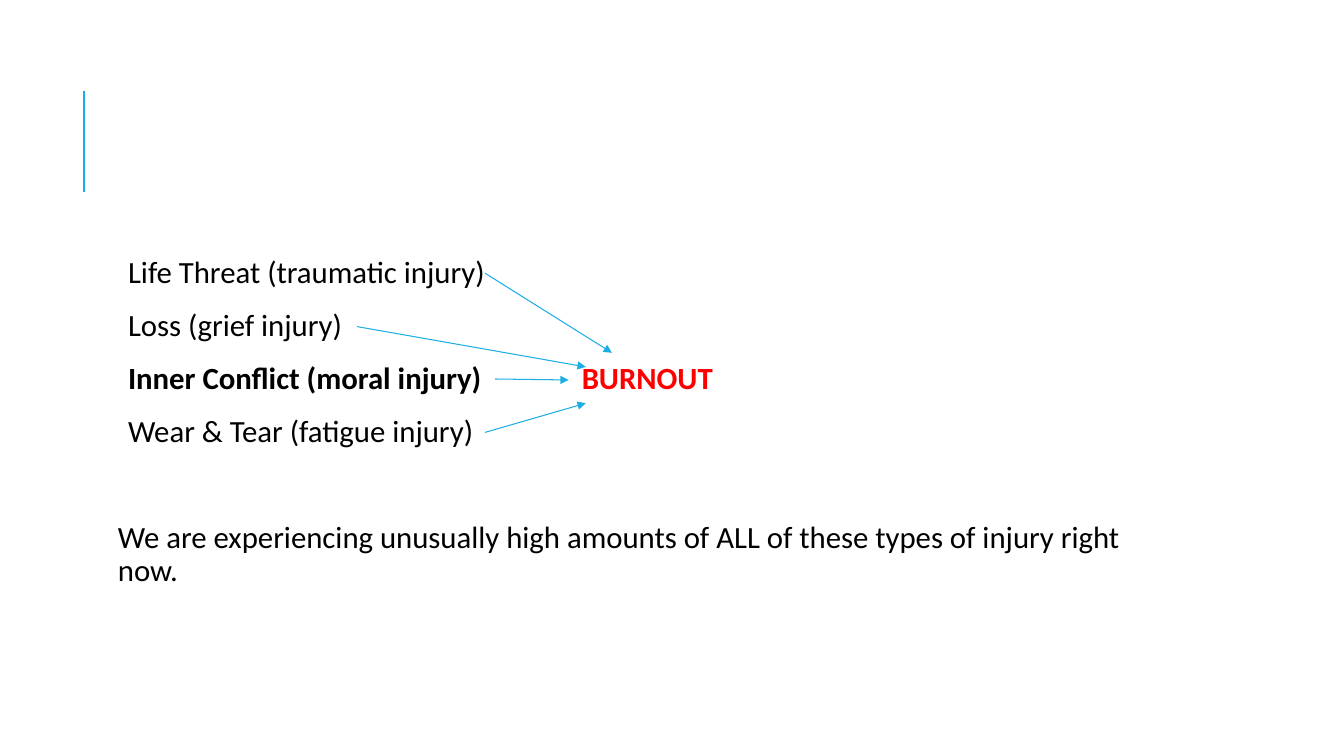
from lxml import etree
from pptx import Presentation
from pptx.dml.color import RGBColor
from pptx.enum.shapes import MSO_CONNECTOR
from pptx.enum.text import MSO_ANCHOR, MSO_AUTO_SIZE
from pptx.oxml.ns import qn
from pptx.util import Inches, Pt

STRAIGHT = MSO_CONNECTOR.STRAIGHT
TOP = MSO_ANCHOR.TOP
NO_AUTOFIT = MSO_AUTO_SIZE.NONE

COLORS = {"accent": "1CADE4", "text": "000000", "burnout": "FF0000"}
FONT = "Calibri"

INJURIES = [
    ("Life Threat (traumatic injury)", False),
    ("Loss (grief injury)", False),
    ("Inner Conflict (moral injury)", True),
    ("Wear & Tear (fatigue injury)", False),
]
SUMMARY = ("We are experiencing unusually high amounts of ALL of these "
           "types of injury right now.")
# Arrow ends relative to the body box: x1, y1, x2, y2
ARROWS = [
    (3.69, 0.21, 4.95, 1.0),
    (2.42, 0.74, 4.69, 1.14),
    (3.79, 1.26, 4.52, 1.27),
    (3.69, 1.79, 4.69, 1.5),
]


def add_text(p, text, size=22, color="text", bold=False):
    r = p.add_run()
    r.text = text
    r.font.name = FONT
    r.font.size = Pt(size)
    r.font.bold = bold
    r.font.color.rgb = RGBColor.from_string(COLORS[color])


def format_paragraph(p, margin=0, before=12):
    p.line_spacing = 0.9
    p.space_before = Pt(before)
    p.space_after = Pt(2)
    pPr = p._p.get_or_add_pPr()
    pPr.set("marL", str(Inches(margin)))
    pPr.set("indent", "0")
    etree.SubElement(pPr, qn("a:buNone"))


def add_line(s, x1, y1, x2, y2, width=0.75, arrow=False):
    line = s.shapes.add_connector(
        STRAIGHT, Inches(x1), Inches(y1), Inches(x2), Inches(y2))
    line.line.color.rgb = RGBColor.from_string(COLORS["accent"])
    line.line.width = Pt(width)
    if arrow:
        etree.SubElement(line.line._get_or_add_ln(), qn("a:tailEnd"), type="triangle")
    etree.SubElement(line._element.spPr, qn("a:effectLst"))


def add_body(s, x, y, w, h):
    sp = s.placeholders[1]
    sp.left, sp.top, sp.width, sp.height = map(Inches, (x, y, w, h))
    tf = sp.text_frame
    tf.word_wrap = True
    tf.auto_size = NO_AUTOFIT
    tf.vertical_anchor = TOP
    tf.margin_left = tf.margin_right = Inches(0.05)
    tf.margin_top = tf.margin_bottom = Inches(0.05)

    # Injury types, with the outcome beside the emphasised one
    for i, (injury, bold) in enumerate(INJURIES):
        p = tf.paragraphs[0] if i == 0 else tf.add_paragraph()
        format_paragraph(p, margin=0.1)
        add_text(p, injury, bold=bold)
        if bold:
            add_text(p, "\t\tBURNOUT", color="burnout", bold=True)

    # Summary, set apart from the list
    p = tf.add_paragraph()
    format_paragraph(p, before=50)
    add_text(p, SUMMARY)


def add_arrows(s, x, y):
    for x1, y1, x2, y2 in ARROWS:
        add_line(s, x + x1, y + y1, x + x2, y + y2, arrow=True)


def main():
    prs = Presentation()
    prs.slide_width, prs.slide_height = Inches(13.33), Inches(7.5)
    s = prs.slides.add_slide(prs.slide_layouts[1])
    title = s.shapes.title._element
    title.getparent().remove(title)

    # Accent rule
    add_line(s, 0.83, 1.9, 0.83, 0.9, width=1.5)
    # Body text and arrows to the outcome
    add_body(s, 1.12, 2.5, 10.63, 4.4)
    add_arrows(s, 1.12, 2.5)
    prs.save("out.pptx")


if __name__ == "__main__":
    main()
